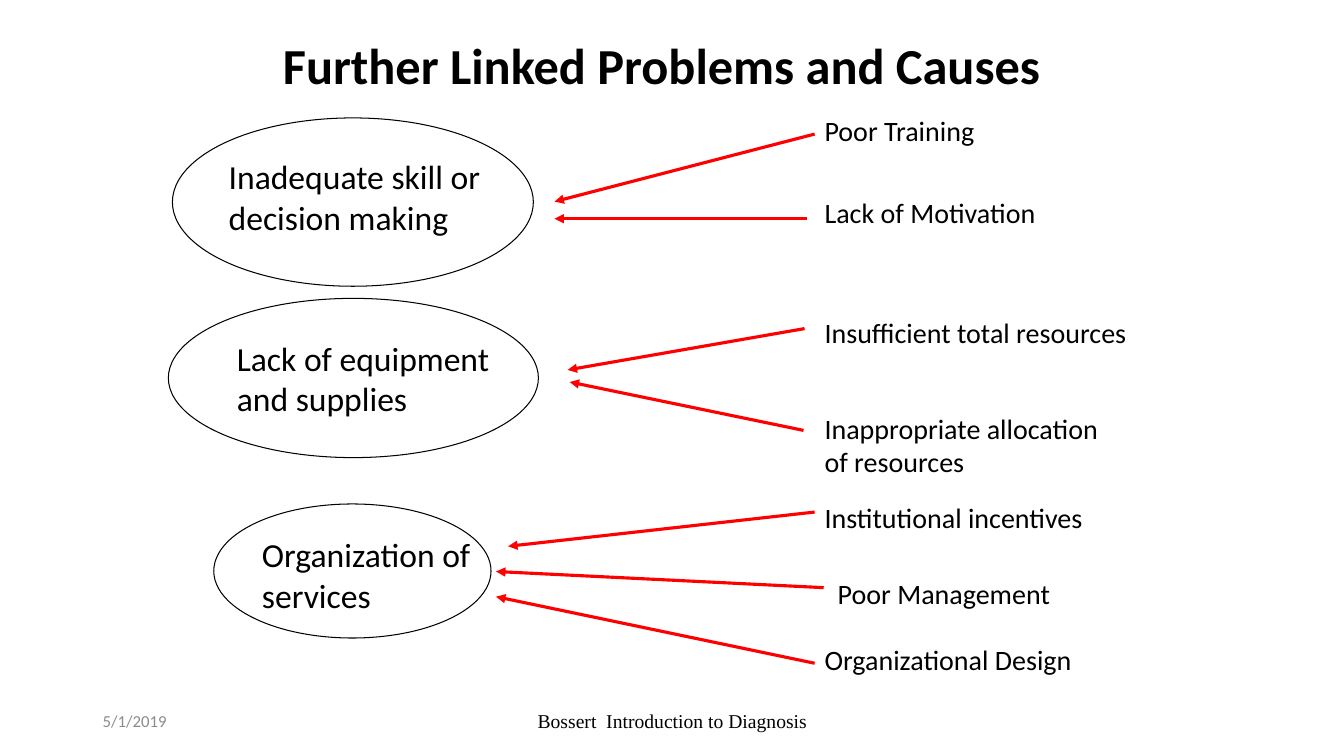
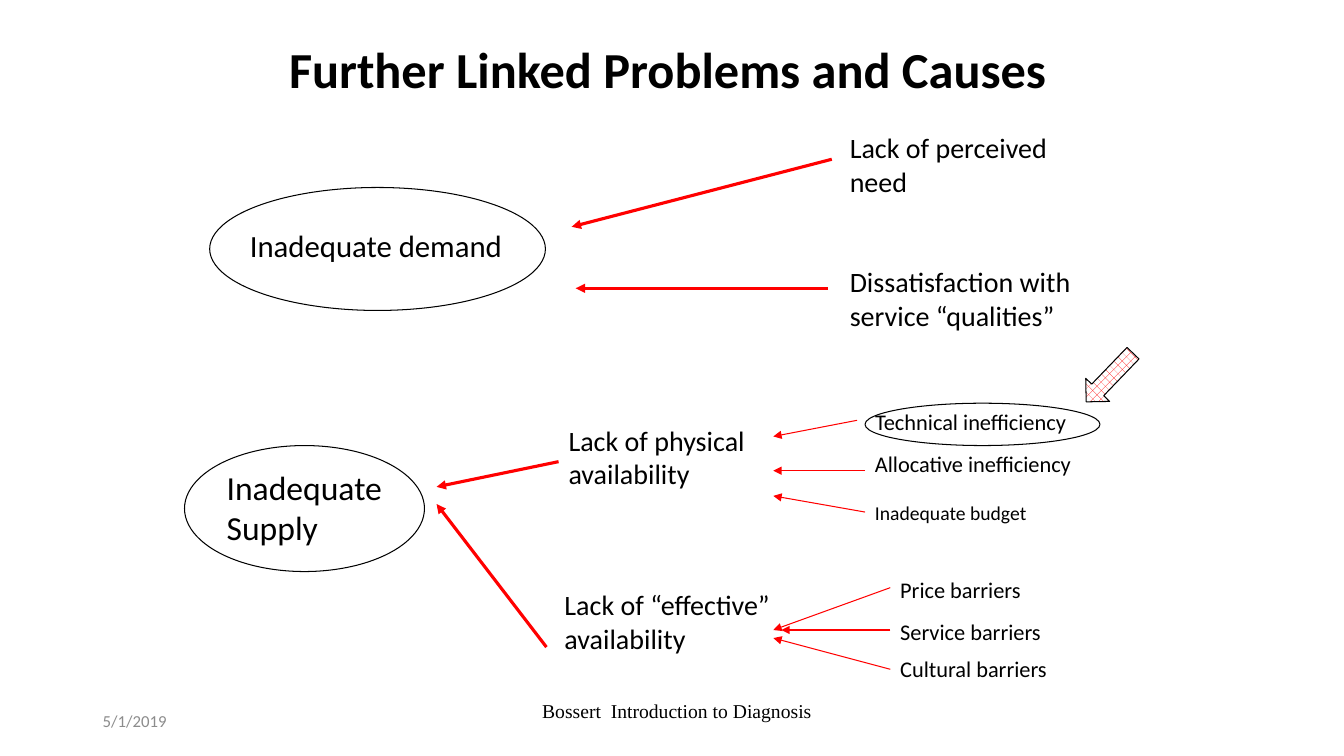
from dataclasses import dataclass

from lxml import etree
from pptx import Presentation
from pptx.dml.color import RGBColor
from pptx.enum.dml import MSO_PATTERN
from pptx.enum.shapes import MSO_CONNECTOR, MSO_SHAPE
from pptx.enum.text import MSO_ANCHOR, MSO_AUTO_SIZE, PP_ALIGN
from pptx.oxml.ns import qn
from pptx.util import Inches, Pt

BLACK = RGBColor(0x00, 0x00, 0x00)
WHITE = RGBColor(0xFF, 0xFF, 0xFF)
RED = RGBColor(0xFF, 0x00, 0x00)
GRAY = RGBColor(0x8C, 0x8C, 0x8C)
SANS = "Calibri"
SERIF = "Times New Roman"
LEFT, CENTER = PP_ALIGN.LEFT, PP_ALIGN.CENTER
TOP, MIDDLE = MSO_ANCHOR.TOP, MSO_ANCHOR.MIDDLE
NO_RESIZE = MSO_AUTO_SIZE.NONE
STRAIGHT = MSO_CONNECTOR.STRAIGHT
OVAL, RIGHT_ARROW = MSO_SHAPE.OVAL, MSO_SHAPE.RIGHT_ARROW
PERCENT_40 = MSO_PATTERN.from_xml("pct40")
TITLE_ONLY = 5
THICK, THIN = 2.25, 0.75
TITLE = "Further Linked Problems and Causes"
FOOTER = "Bossert  Introduction to Diagnosis"
DATE = "5/1/2019"


@dataclass(frozen=True)
class Box:
    x: float
    y: float
    w: float
    h: float

    def lengths(self):
        return Inches(self.x), Inches(self.y), Inches(self.w), Inches(self.h)


@dataclass(frozen=True)
class Label:
    text: str
    box: Box
    size: float = 20


@dataclass(frozen=True)
class Arrow:
    x1: float
    y1: float
    x2: float
    y2: float
    width: float = THICK


@dataclass(frozen=True)
class Diagram:
    title_box: Box
    footer_box: Box
    ovals: tuple[Box, ...]
    labels: tuple[Label, ...]
    arrows: tuple[Arrow, ...]


LINKED_CAUSES = Diagram(
    Box(1.94, 0.29, 9.25, 0.7),
    Box(4.42, 6.95, 4.5, 0.4),
    (
        Box(1.71, 1.17, 3.58, 1.67),
        Box(1.67, 2.96, 3.67, 1.58),
        Box(2.12, 5, 2.75, 1.33),
    ),
    (
        Label("Inadequate skill or decision making", Box(2.17, 1.5, 3, 0.91), 24),
        Label("Lack of equipment and supplies", Box(2.25, 3.3, 3.25, 0.91), 24),
        Label("Organization of services", Box(2.5, 5.25, 2.27, 0.91), 24),
        Label("Poor Training", Box(8.08, 1.08, 2.5, 0.43)),
        Label("Lack of Motivation", Box(8.08, 1.89, 2.4, 0.44)),
        Label("Insufficient total resources", Box(8.08, 3.08, 3.33, 0.44)),
        Label("Inappropriate allocation of resources", Box(8.08, 4.03, 3, 0.77)),
        Label("Institutional incentives", Box(8.08, 4.92, 3.5, 0.43)),
        Label("Poor Management", Box(8.21, 5.67, 3.08, 0.43)),
        Label("Organizational Design", Box(8.08, 6.33, 3, 0.43)),
    ),
    (
        Arrow(8.08, 1.33, 5.5, 2),
        Arrow(8, 2.17, 5.5, 2.17),
        Arrow(7.98, 3.26, 5.63, 3.67),
        Arrow(7.97, 4.27, 5.65, 3.79),
        Arrow(8.08, 5.08, 5.04, 5.42),
        Arrow(8.17, 5.83, 4.92, 5.67),
        Arrow(8.08, 6.58, 4.92, 5.92),
    ),
)

DEMAND_AND_SUPPLY = Diagram(
    Box(2, 0.33, 9.25, 0.7),
    Box(5.13, 6.8, 3.17, 0.5),
    (
        Box(2.08, 1.86, 3.33, 1.22),
        Box(1.83, 4.42, 2.38, 1.25),
        Box(8.58, 4, 2.33, 0.42),
    ),
    (
        Label("Inadequate demand", Box(2.38, 2.2, 3, 0.47), 22),
        Label("Inadequate Supply", Box(2.15, 4.58, 2.27, 0.91), 24),
        Label("Lack of perceived need", Box(8.33, 1.25, 2.5, 0.77)),
        Label("Dissatisfaction with service “qualities”", Box(8.33, 2.58, 2.83, 0.77)),
        Label("Lack of physical availability", Box(5.54, 4.15, 2.25, 0.77)),
        Label("Lack of “effective” availability", Box(5.5, 5.78, 2.71, 0.77)),
        Label("Technical inefficiency", Box(8.58, 4, 2.42, 0.37), 16),
        Label("Allocative inefficiency", Box(8.58, 4.42, 2.5, 0.37), 16),
        Label("Inadequate budget", Box(8.58, 4.92, 2.33, 0.33), 14),
        Label("Price barriers", Box(8.83, 5.67, 2.25, 0.37), 16),
        Label("Service barriers", Box(8.83, 6.08, 2.17, 0.37), 16),
        Label("Cultural barriers", Box(8.83, 6.45, 2, 0.37), 16),
    ),
    (
        Arrow(8.25, 1.58, 5.67, 2.25),
        Arrow(8.21, 2.86, 5.71, 2.86),
        Arrow(5.54, 4.58, 4.33, 4.83),
        Arrow(5.42, 6.42, 4.33, 5),
        Arrow(8.5, 4.17, 7.67, 4.33, THIN),
        Arrow(8.58, 4.67, 7.67, 4.67, THIN),
        Arrow(8.58, 5.08, 7.67, 4.92, THIN),
        Arrow(8.83, 5.83, 7.67, 6.25, THIN),
        Arrow(8.83, 6.25, 7.75, 6.25, THIN),
        Arrow(8.83, 6.64, 7.67, 6.33, THIN),
    ),
)


def write_text(sp, text: str, size: float, color=BLACK, font=SANS,
               bold=False, align=LEFT, anchor=TOP) -> None:
    tf = sp.text_frame
    tf.word_wrap = True
    tf.auto_size = NO_RESIZE
    tf.vertical_anchor = anchor
    p = tf.paragraphs[0]
    p.alignment = align
    r = p.add_run()
    r.text = text
    r.font.name = font
    r.font.size = Pt(size)
    r.font.bold = bold
    r.font.color.rgb = color


def add_title(s, box: Box) -> None:
    sp = s.shapes.title
    sp.left, sp.top, sp.width, sp.height = box.lengths()
    write_text(sp, TITLE, 36, bold=True, align=CENTER)


def add_outlined(s, kind, box: Box):
    sp = s.shapes.add_shape(kind, *box.lengths())
    sp.shadow.inherit = False
    sp.fill.background()
    sp.line.color.rgb = BLACK
    sp.line.width = Pt(THIN)
    return sp


def add_arrow(s, arrow: Arrow) -> None:
    cxn = s.shapes.add_connector(
        STRAIGHT, Inches(arrow.x1), Inches(arrow.y1), Inches(arrow.x2), Inches(arrow.y2))
    cxn.line.color.rgb = RED
    cxn.line.width = Pt(arrow.width)
    sp_pr = cxn._element.spPr
    etree.SubElement(sp_pr.find(qn("a:ln")), qn("a:tailEnd"), type="triangle")
    etree.SubElement(sp_pr, qn("a:effectLst"))


def add_pointer(s) -> None:
    sp = add_outlined(s, RIGHT_ARROW, Box(10.67, 3.58, 0.67, 0.33))
    sp.rotation = 133.9
    sp.fill.patterned()
    sp.fill.pattern = PERCENT_40
    sp.fill.fore_color.rgb = RED
    sp.fill.back_color.rgb = WHITE


def add_diagram(prs, diagram: Diagram):
    s = prs.slides.add_slide(prs.slide_layouts[TITLE_ONLY])
    add_title(s, diagram.title_box)
    for oval in diagram.ovals:
        add_outlined(s, OVAL, oval)
    for label in diagram.labels:
        write_text(s.shapes.add_textbox(*label.box.lengths()), label.text, label.size)
    for arrow in diagram.arrows:
        add_arrow(s, arrow)
    footer = s.shapes.add_textbox(*diagram.footer_box.lengths())
    write_text(footer, FOOTER, 14, font=SERIF, align=CENTER, anchor=MIDDLE)
    date = s.shapes.add_textbox(*Box(0.92, 6.95, 3, 0.4).lengths())
    write_text(date, DATE, 12, color=GRAY, anchor=MIDDLE)
    return s


def main() -> None:
    prs = Presentation()
    prs.slide_width = Inches(13.33)
    prs.slide_height = Inches(7.5)
    add_diagram(prs, LINKED_CAUSES)
    add_pointer(add_diagram(prs, DEMAND_AND_SUPPLY))
    prs.save("out.pptx")


if __name__ == "__main__":
    main()
